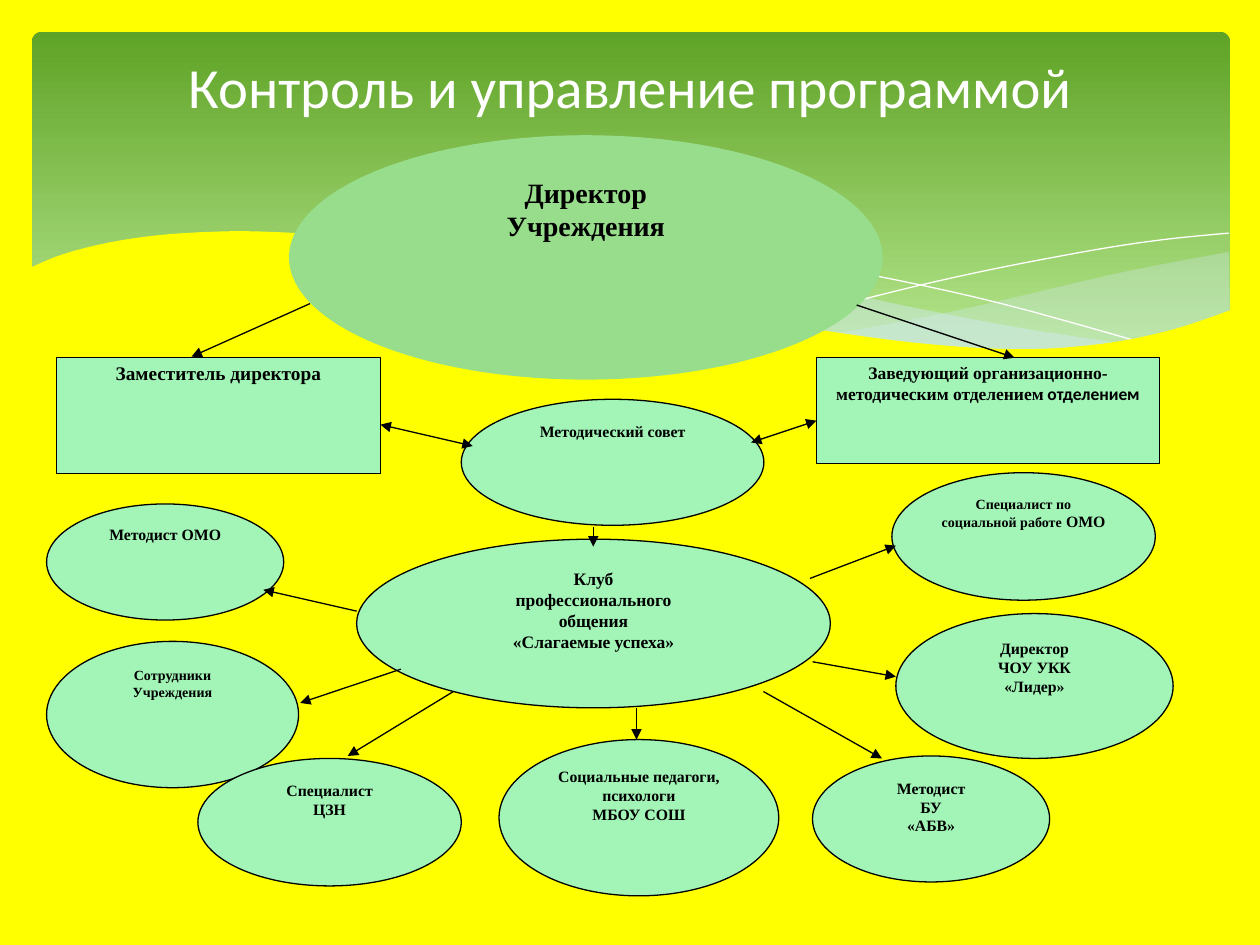
from lxml.etree import SubElement
from pptx import Presentation
from pptx.dml.color import RGBColor
from pptx.enum.shapes import MSO_CONNECTOR, MSO_SHAPE
from pptx.enum.text import MSO_ANCHOR, PP_ALIGN
from pptx.oxml.ns import qn
from pptx.util import Cm, Pt

THEME = {
    "page": "FFFF00", "panel": ("5FA326", "B2E389"), "band": "D6ECFF",
    "white": "FFFFFF", "ink": "000000", "director": "97DD8B", "node": "A2F4B7",
    "title_font": "Calibri", "body_font": "Times New Roman",
    "title": 32.4, "lead": 16, "deputy": 11, "unit": 10, "member": 9, "small": 8,
}
TITLE = "Контроль и управление программой"
OVAL, BOX = MSO_SHAPE.OVAL, MSO_SHAPE.RECTANGLE

# Outline, (left, top, width, height) in cm, size, paragraphs.
# A paragraph is a string or a list of (text, font overrides).
NODES = [
    (OVAL, (5.84, 2.74, 11.94, 4.9), "lead", ["Директор", "Учреждения"]),
    (OVAL, (9.3, 8.05, 6.1, 2.54), "member", ["Методический совет"]),
    (BOX, (1.14, 7.21, 6.53, 2.34), "deputy", ["Заместитель директора"]),
    (BOX, (16.46, 7.21, 6.91, 2.13), "unit", [[
        ("Заведующий организационно-методическим отделением", {}),
        (" отделением", {"name": THEME["title_font"]})]]),
    (OVAL, (7.19, 10.87, 9.55, 3.4), "unit",
     ["Клуб", "профессионального", "общения", "«Слагаемые успеха»"]),
    (OVAL, (0.94, 12.93, 5.08, 2.95), "small", ["Сотрудники Учреждения"]),
    (OVAL, (16.38, 15.24, 4.78, 2.54), "member", ["Методист", "БУ", "«АБВ»"]),
    (OVAL, (3.99, 15.29, 5.31, 2.57), "member", ["Специалист", "ЦЗН"]),
    (OVAL, (10.06, 14.91, 5.64, 3.15), "member",
     ["Социальные педагоги,", "психологи", "МБОУ СОШ"]),
    (OVAL, (18.06, 12.37, 5.59, 2.92), "member", ["Директор", "ЧОУ УКК", "«Лидер»"]),
    (OVAL, (17.98, 9.53, 5.31, 2.57), "small", [[
        ("Специалист по социальной работе", {}),
        (" ОМО", {"size": Pt(THEME["member"])})]]),
    (OVAL, (0.94, 10.16, 4.78, 2.34), "member", ["Методист ОМО"]),
]

# Start x, y, end x, y in cm
ONE_WAY = [
    (6.25, 6.12, 3.86, 7.19), (17.27, 6.15, 20.45, 7.21),
    (8.08, 13.49, 6.05, 14.17), (15.39, 13.94, 17.78, 15.29),
    (16.33, 11.66, 18.06, 11), (11.96, 10.62, 11.96, 11.02),
    (12.83, 14.27, 12.83, 14.91), (9.14, 13.94, 7.01, 15.24),
    (7.19, 12.32, 5.31, 11.89), (16.38, 13.34, 18.06, 13.64),
]
TWO_WAY = [(7.67, 8.56, 9.53, 8.99), (16.46, 8.48, 15.14, 8.92)]

# Each band is an upper edge and a lower edge, with its opacity in percent
BANDS = [
    (29,
     [(24.77, 5.08), (23.01, 5.41), (21.87, 5.66), (19.79, 6.15), (17.93, 6.53),
      (16.79, 6.73)],
     [(16.79, 6.73), (18.59, 6.96), (20.4, 7.06), (21.92, 6.99), (23.19, 6.78),
      (24.1, 6.53), (24.79, 6.27)]),
    (40,
     [(22.68, 6.93), (20.5, 6.6), (17.93, 6.1), (15.98, 5.64), (13.74, 5.16),
      (11.81, 4.85), (9.65, 4.7), (8.33, 4.75), (7.26, 4.85)],
     [(7.26, 4.85), (8.69, 5.05), (10.26, 5.36), (11.4, 5.64), (13.46, 6.1),
      (15.7, 6.55), (17.65, 6.86), (19.63, 7.04), (21.03, 7.06), (22.68, 6.93)]),
]
STRANDS = [
    [(7.85, 4.95), (9.22, 4.8), (11, 4.75), (12.95, 4.88), (15.44, 5.18),
     (17.65, 5.56), (20.19, 6.12), (23.04, 6.91)],
    [(15.57, 6.53), (17.65, 5.97), (19.71, 5.49), (22, 5.05), (23.47, 4.83),
     (24.77, 4.7)],
]
WAVE = [
    (24.82, 6.25), (23.62, 6.65), (22.23, 6.93), (20.55, 7.04), (18.44, 6.91),
    (15.9, 6.55), (13.44, 6.07), (11.35, 5.59), (9.27, 5.13), (7.42, 4.83),
    (5.36, 4.67), (3.71, 4.7), (2.41, 4.85), (1.32, 5.11), (0.58, 5.41),
]
WAVE_BASE = [(0.58, 8.36), (24.82, 8.36)]


def rgb(role):
    return RGBColor.from_string(THEME[role])


def smooth(knots, steps=5):
    """Points of a Catmull-Rom curve through the knots."""
    padded = [knots[0], *knots, knots[-1]]
    curve = [knots[0]]
    for a, b, c, d in zip(padded, padded[1:], padded[2:], padded[3:]):
        for step in range(1, steps + 1):
            t = step / steps
            curve.append(tuple(
                q + t * (r - p) / 2 + t * t * (p - 2.5 * q + 2 * r - s / 2)
                + t ** 3 * (3 * q - p - 3 * r + s) / 2
                for p, q, r, s in zip(a, b, c, d)))
    return curve


def paint(shape, fill=None, line=None, width=0.75):
    shape.shadow.inherit = False
    if fill:
        shape.fill.solid()
        shape.fill.fore_color.rgb = rgb(fill)
    else:
        shape.fill.background()
    if line:
        shape.line.color.rgb = rgb(line)
        shape.line.width = Pt(width)
    else:
        shape.line.fill.background()


def add_outline(shapes, points, closed=True):
    corners = [(Cm(x), Cm(y)) for x, y in points]
    builder = shapes.build_freeform(*corners[0])
    builder.add_line_segments(corners[1:], close=closed)
    return builder.convert_to_shape()


def add_backdrop(shapes):
    panel = shapes.add_shape(MSO_SHAPE.ROUNDED_RECTANGLE,
                             Cm(0.64), Cm(0.64), Cm(24.16), Cm(6.86))
    panel.adjustments[0] = 0.03
    paint(panel)
    panel.fill.gradient()
    panel.fill.gradient_angle = 270
    for stop, position, color in zip(panel.fill.gradient_stops, (0, 0.9), THEME["panel"]):
        stop.position = position
        stop.color.rgb = RGBColor.from_string(color)
    for opacity, upper, lower in BANDS:
        band = add_outline(shapes, smooth(upper) + smooth(lower))
        paint(band, "band")
        tint = band._element.spPr.find(qn("a:solidFill")).find(qn("a:srgbClr"))
        SubElement(tint, qn("a:alpha"), val=str(opacity * 1000))
    for strand in STRANDS:
        paint(add_outline(shapes, smooth(strand), closed=False), line="white", width=0)
    paint(add_outline(shapes, smooth(WAVE) + WAVE_BASE), "page")


def write(frame, paragraphs, font, frame_format):
    for name, value in frame_format.items():
        setattr(frame, name, value)
    for index, content in enumerate(paragraphs):
        paragraph = frame.add_paragraph() if index else frame.paragraphs[0]
        paragraph.alignment = PP_ALIGN.CENTER
        for text, changes in [(content, {})] if isinstance(content, str) else content:
            run = paragraph.add_run()
            run.text = text
            for name, value in {**font, **changes}.items():
                if name == "color":
                    run.font.color.rgb = rgb(value)
                else:
                    setattr(run.font, name, value)


def add_node(shapes, outline, place, size, paragraphs):
    node = shapes.add_shape(outline, *map(Cm, place))
    if size == "lead":
        paint(node, "director", "director")
    else:
        paint(node, "node", "ink")
    write(node.text_frame, paragraphs,
          {"name": THEME["body_font"], "size": Pt(THEME[size]), "bold": True, "color": "ink"},
          {"word_wrap": True, "vertical_anchor": MSO_ANCHOR.TOP,
           "margin_left": Cm(0.18), "margin_right": Cm(0.18),
           "margin_top": Cm(0.08), "margin_bottom": Cm(0.08)})


def add_arrow(shapes, ends, heads):
    arrow = shapes.add_connector(MSO_CONNECTOR.STRAIGHT, *map(Cm, ends))
    arrow.line.color.rgb = rgb("ink")
    arrow.line.width = Pt(0.75)
    for head in heads:
        SubElement(arrow.line._get_or_add_ln(), qn(head), type="triangle")
    SubElement(arrow._element.spPr, qn("a:effectLst"))


def main():
    deck = Presentation()
    deck.slide_width, deck.slide_height = Cm(25.4), Cm(19.05)
    slide = deck.slides.add_slide(deck.slide_layouts[5])
    slide.background.fill.solid()
    slide.background.fill.fore_color.rgb = rgb("page")
    shapes = slide.shapes
    add_backdrop(shapes)

    title = shapes.title
    shapes._spTree.append(title._element)  # in front of the backdrop
    title.left, title.top, title.width, title.height = map(Cm, (1.27, 0.94, 22.86, 1.57))
    write(title.text_frame, [TITLE],
          {"name": THEME["title_font"], "size": Pt(THEME["title"]), "color": "white"},
          {"word_wrap": True, "vertical_anchor": MSO_ANCHOR.MIDDLE})

    for node in NODES:
        add_node(shapes, *node)
    for ends in ONE_WAY:
        add_arrow(shapes, ends, ["a:tailEnd"])
    for ends in TWO_WAY:
        add_arrow(shapes, ends, ["a:headEnd", "a:tailEnd"])
    deck.save("out.pptx")


if __name__ == "__main__":
    main()
